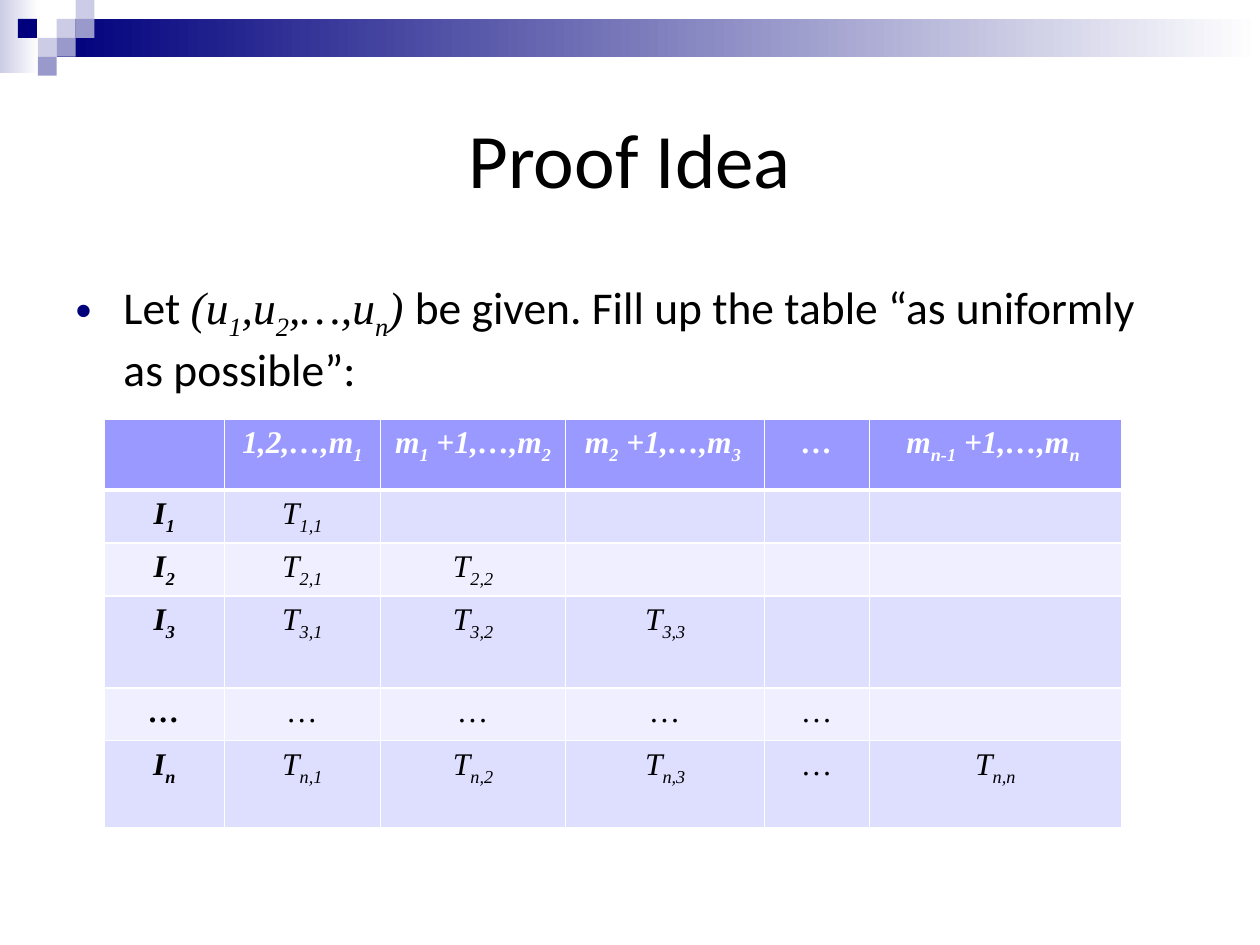
"""Build the "Proof Idea" slide with its triangular table of T entries."""
from lxml.etree import SubElement as Sub
from pptx import Presentation
from pptx.dml.color import RGBColor as Rgb
from pptx.enum.shapes import MSO_SHAPE as Kind
from pptx.enum.text import MSO_ANCHOR as Anchor, MSO_AUTO_SIZE as Fit, PP_ALIGN as Align
from pptx.oxml.ns import qn
from pptx.util import Inches, Pt

HUE = {"navy": "00007D", "pale": "CCCCE6", "mid": "9999CC", "white": "FFFFFF",
       "black": "000000", "head": "9999FF", "odd": "DEDEFF", "even": "EFEFFF"}
SANS, SERIF = "Calibri", "Times New Roman"


def write(para, text, size=18, font=SERIF, hue="black", bold=False, slant=False):
    """Add runs to a paragraph; text between underscores is subscript."""
    for i, part in enumerate(text.split("_")):
        if part:
            run = para.add_run()
            run.text = part
            face = run.font
            face.size, face.name, face.bold, face.italic = Pt(size), font, bold, slant
            face.color.rgb = Rgb.from_string(HUE[hue])
            if i % 2:
                face._element.set("baseline", "-25000")


def block(left, top, wide, high, hue, fade=False):
    """Draw a plain rectangle measured in steps of the corner grid."""
    box = slide.shapes.add_shape(Kind.RECTANGLE, *(int(step * n) for n in (left, top, wide, high)))
    box.shadow.inherit = False
    box.line.fill.background()
    if fade:
        box.fill.gradient()
        box.fill.gradient_angle = 0
        for stop, name in zip(box.fill.gradient_stops, (hue, "white")):
            stop.color.rgb = Rgb.from_string(HUE[name])
    else:
        box.fill.solid()
        box.fill.fore_color.rgb = Rgb.from_string(HUE[hue])


deck = Presentation()
deck.slide_width, deck.slide_height = Inches(10), Inches(7.5)
wide, high = deck.slide_width, deck.slide_height
slide = deck.slides.add_slide(deck.slide_layouts[1])
step = Inches(0.15)

block(0, 0, 2.05, 3.85, "pale", fade=True)
block(3, 1, wide / step - 3, 2, "navy", fade=True)
for col, row, hue in [(3, 1, "pale"), (4, 0, "pale"), (4, 1, "mid"), (2, 2, "pale"),
                      (0.95, 1, "navy"), (3, 2, "mid"), (2, 3, "mid")]:
    block(col, row, 1, 1, hue)

title, body = slide.placeholders
for hold, top, tall in [(title, 0.067, 0.2), (body, 0.289, 0.567)]:
    hold.left, hold.top = int(wide * 0.05), int(high * top)
    hold.width, hold.height = int(wide * 0.9), int(high * tall)
    hold.text_frame.auto_size = Fit.NONE
    hold.text_frame.word_wrap = True

title.text_frame.vertical_anchor = Anchor.MIDDLE
para = title.text_frame.paragraphs[0]
para.alignment = Align.CENTER
write(para, "Proof Idea", size=44, font=SANS)

para = body.text_frame.paragraphs[0]
para.space_before = Pt(5.2)
props = para._p.get_or_add_pPr()
props.set("marL", str(Inches(0.38)))
props.set("indent", str(-Inches(0.38)))
Sub(Sub(props, qn("a:buClr")), qn("a:srgbClr"), val=HUE["navy"])
Sub(props, qn("a:buChar"), char="•")
write(para, "Let ", size=26, font=SANS)
write(para, "(u_1_,u_2_,…,u_n_) ", size=26, slant=True)
write(para, "be given. Fill up the table “as uniformly as possible”:", size=26, font=SANS)

marks = ["1", "2", "3", "…", "n"]
rows = [["", "1,2,…,m_1_", "m_1_ +1,…,m_2 _", "m_2_ +1,…,m_3 _", "…", "m_n-1_ +1,…,m_n _"]]
for r, mark in enumerate(marks):
    line = ["…" if mark == "…" else f"I_{mark}_"]
    for c, other in enumerate(marks):
        dots = "…" in (mark, other)
        line.append("" if c > r else "…" if dots else f"T_{mark},{other}_")
    rows.append(line)

cols = [0.95, 1.24, 1.47, 1.58, 0.83, 2]
tall = [0.56, 0.42, 0.42, 0.73, 0.42, 0.69]
grid = slide.shapes.add_table(len(rows), len(cols), Inches(0.83), Inches(3.33),
                              Inches(sum(cols)), Inches(sum(tall))).table
for c, size in enumerate(cols):
    grid.columns[c].width = Inches(size)
for r, line in enumerate(rows):
    grid.rows[r].height = Inches(tall[r])
    for c, text in enumerate(line):
        cell = grid.cell(r, c)
        props = cell._tc.get_or_add_tcPr()
        for side in "LRTB":
            thick = 3 if (r, side) in [(0, "B"), (1, "T")] else 1
            edge = Sub(props, qn(f"a:ln{side}"), w=str(Pt(thick)))
            Sub(Sub(edge, qn("a:solidFill")), qn("a:srgbClr"), val=HUE["white"])
        cell.fill.solid()
        tint = "head" if r == 0 else "odd" if r % 2 else "even"
        cell.fill.fore_color.rgb = Rgb.from_string(HUE[tint])
        para = cell.text_frame.paragraphs[0]
        para.alignment = Align.CENTER
        write(para, text, hue="black" if r else "white", bold=r == 0 or c == 0, slant=True)

deck.save("out.pptx")
